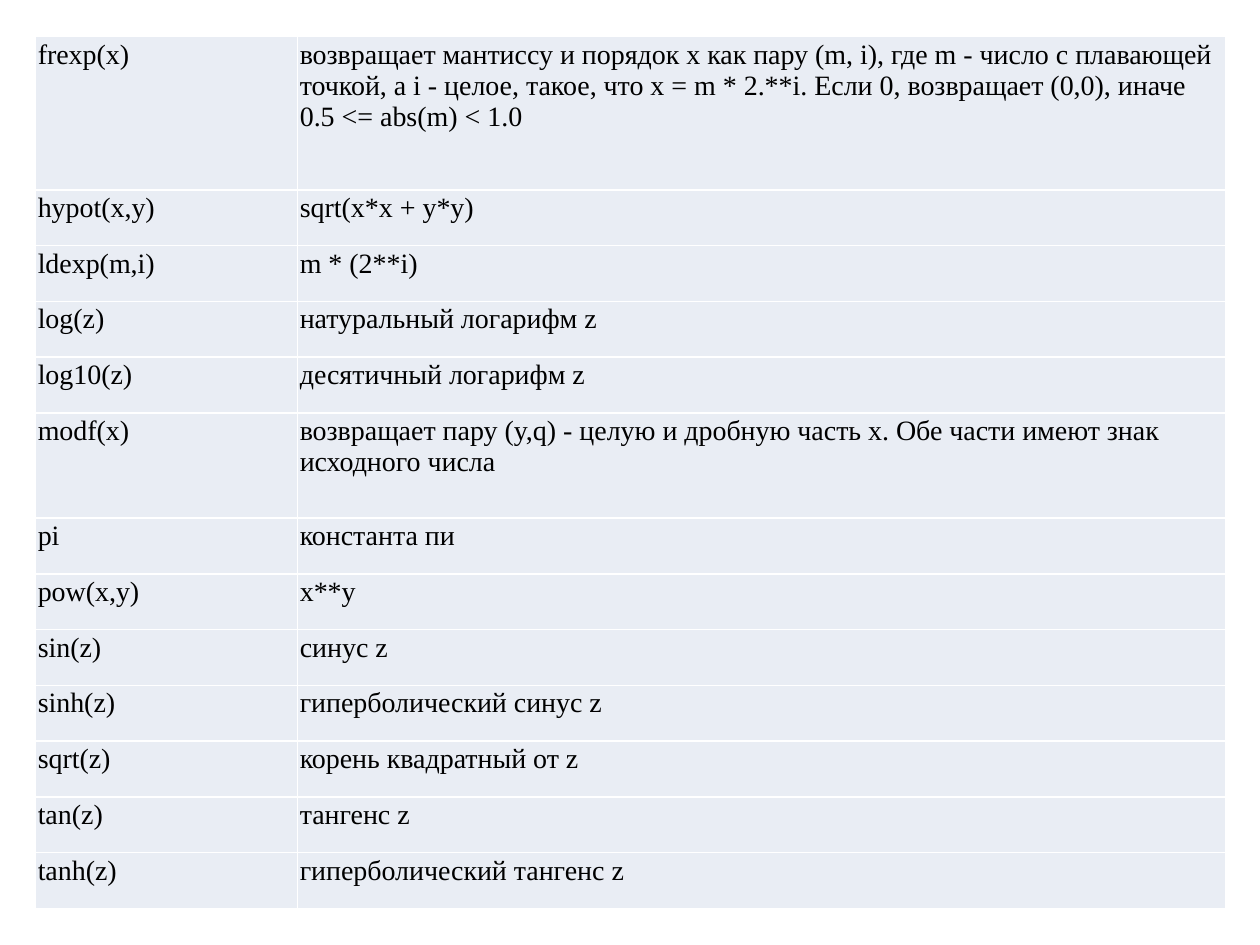
import dataclasses

import pptx
import pptx.dml.color
import pptx.enum.text
import pptx.oxml
import pptx.oxml.ns
import pptx.util


@dataclasses.dataclass(frozen=True)
class Theme:
    font: str = "Times New Roman"
    size: int = 16
    ink: str = "000000"
    band: str = "E9EDF4"
    rule: str = "FFFFFF"
    rule_width: int = 1
    inset: float = 0.02


THEME = Theme()
SLIDE_WIDTH, SLIDE_HEIGHT = pptx.util.Inches(10), pptx.util.Inches(7.5)
COLUMN_WEIGHTS = (2.08, 7.37)
# Row height by the number of text lines in the description
ROW_WEIGHTS = {1: 0.44, 2: 0.83, 3: 1.21}

# Function, description, lines of text
FUNCTIONS = [
    ("frexp(x)", "возвращает мантиссу и порядок x как пару (m, i), где m - число "
     "с плавающей точкой, а i - целое, такое, что x = m * 2.**i. Если 0, "
     "возвращает (0,0), иначе 0.5 <= abs(m) < 1.0", 3),
    ("hypot(x,y)", "sqrt(x*x + y*y)", 1),
    ("ldexp(m,i)", "m * (2**i)", 1),
    ("log(z)", "натуральный логарифм z", 1),
    ("log10(z)", "десятичный логарифм z", 1),
    ("modf(x)", "возвращает пару (y,q) - целую и дробную часть x. Обе части "
     "имеют знак исходного числа", 2),
    ("pi", "константа пи", 1),
    ("pow(x,y)", "x**y", 1),
    ("sin(z)", "синус z", 1),
    ("sinh(z)", "гиперболический синус z", 1),
    ("sqrt(z)", "корень квадратный от z", 1),
    ("tan(z)", "тангенс z", 1),
    ("tanh(z)", "гиперболический тангенс z", 1),
]


def apply_format(target, values):
    for name, value in values.items():
        setattr(target, name, value)


def share_out(total, weights):
    """Split a length in proportion to the weights."""
    return [int(total * weight / sum(weights)) for weight in weights]


def add_borders(cell):
    properties = cell._tc.get_or_add_tcPr()
    width = pptx.util.Pt(THEME.rule_width)
    for position, side in enumerate(("lnL", "lnR", "lnT", "lnB")):
        properties.insert(position, pptx.oxml.parse_xml(
            f'<a:{side} {pptx.oxml.ns.nsdecls("a")} w="{width}"><a:solidFill>'
            f'<a:srgbClr val="{THEME.rule}"/></a:solidFill></a:{side}>'))


def fill_cell(cell, wording):
    inset = pptx.util.Inches(THEME.inset)
    apply_format(cell, {
        "text": wording,
        "margin_left": inset, "margin_right": inset,
        "margin_top": inset, "margin_bottom": inset,
        "vertical_anchor": pptx.enum.text.MSO_ANCHOR.TOP,
    })
    cell.fill.solid()
    cell.fill.fore_color.rgb = pptx.dml.color.RGBColor.from_string(THEME.band)
    font = cell.text_frame.paragraphs[0].runs[0].font
    apply_format(font, {"name": THEME.font, "size": pptx.util.Pt(THEME.size),
                        "bold": False})
    font.color.rgb = pptx.dml.color.RGBColor.from_string(THEME.ink)
    add_borders(cell)


def add_function_table(slide, left, top, width, height):
    reference = slide.shapes.add_table(
        len(FUNCTIONS), len(COLUMN_WEIGHTS), left, top, width, height).table
    apply_format(reference, {"first_row": False, "horz_banding": False})
    for column, share in zip(reference.columns, share_out(width, COLUMN_WEIGHTS)):
        column.width = share
    row_shares = share_out(height, [ROW_WEIGHTS[lines] for _, _, lines in FUNCTIONS])
    for row, share, (function, description, _) in zip(
            reference.rows, row_shares, FUNCTIONS):
        row.height = share
        for cell, wording in zip(row.cells, (function, description)):
            fill_cell(cell, wording)


def main():
    presentation = pptx.Presentation()
    apply_format(presentation, {"slide_width": SLIDE_WIDTH,
                                "slide_height": SLIDE_HEIGHT})
    blank_layout = presentation.slide_layouts[6]
    slide = presentation.slides.add_slide(blank_layout)
    add_function_table(
        slide,
        left=int(SLIDE_WIDTH * 0.028), top=pptx.util.Inches(0.29),
        width=pptx.util.Inches(9.45), height=pptx.util.Inches(6.92))
    presentation.save("out.pptx")


if __name__ == "__main__":
    main()
